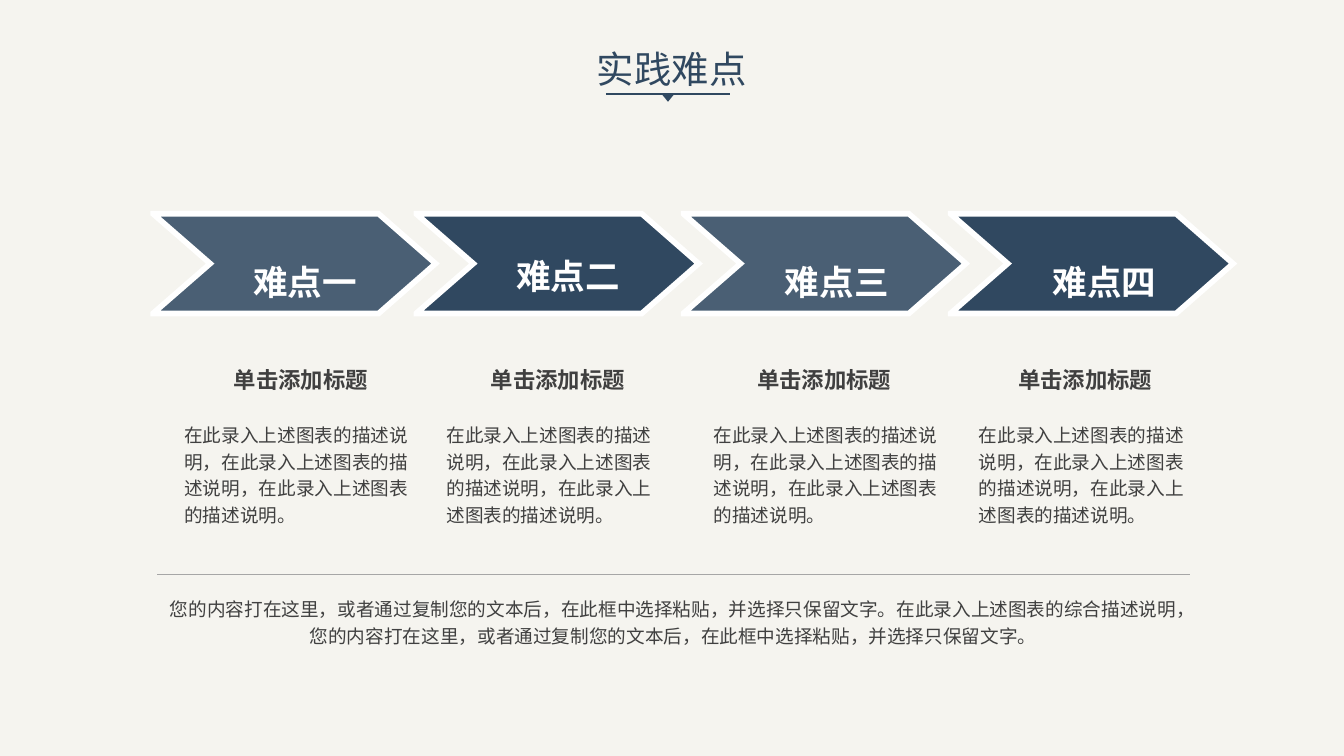
from dataclasses import dataclass

from lxml import etree
from pptx import Presentation
from pptx.dml.color import RGBColor
from pptx.enum.shapes import MSO_CONNECTOR, MSO_SHAPE
from pptx.enum.text import MSO_ANCHOR, MSO_AUTO_SIZE, PP_ALIGN
from pptx.oxml.ns import qn
from pptx.util import Inches, Pt

LINE = MSO_CONNECTOR.STRAIGHT
WEDGE = MSO_SHAPE.ISOSCELES_TRIANGLE
LEFT, MID = PP_ALIGN.LEFT, PP_ALIGN.CENTER
TOP, CORE = MSO_ANCHOR.TOP, MSO_ANCHOR.MIDDLE
GROW = MSO_AUTO_SIZE.SHAPE_TO_FIT_TEXT

WIDE, HIGH = Inches(13.33), Inches(7.5)
COLS, ROWS = 133.3, 75
NAVY, SLATE, WHITE = "304860", "4A5F74", "FFFFFF"
INK, GREY, PAPER = "404040", "A6A6A6", "F5F4EF"
SANS, LATIN = "Noto Sans CJK SC", "Arial"

HEAD = "单击添加标题"
BODY = "，".join(["在此录入上述图表的描述说明"] * 3) + "。"
PASTE = "您的内容打在这里，或者通过复制您的文本后，在此框中选择粘贴，并选择只保留文字。"
NOTE = PASTE + "在此录入上述图表的综合描述说明，" + PASTE


@dataclass
class Box:
    col: float
    row: float
    wide: float
    high: float


@dataclass
class Style:
    size: float
    hue: str = INK
    face: str = SANS
    bold: bool = False
    align: PP_ALIGN = MID
    anchor: MSO_ANCHOR = TOP
    lead: float = 1.0
    wrap: bool = True
    shift: int = 0


@dataclass
class Step:
    name: str
    hue: str
    left: float
    label: Box
    lead: float
    head: float
    body: float
    span: float


STEPS = [
    Step("难点一", SLATE, 15.2, Box(18.1, 22.8, 24.3, 6.6), 1.2, 22.2, 17.3, 24.6),
    Step("难点二", NAVY, 41.3, Box(44.5, 23.3, 23.7, 5.7), 1.0, 47.7, 43.3, 24),
    Step("难点三", SLATE, 67.8, Box(71.3, 22.8, 23.4, 6.6), 1.2, 74.1, 69.8, 24.4),
    Step("难点四", NAVY, 94.3, Box(97.7, 22.8, 23.7, 6.6), 1.2, 100, 96.1, 24),
]
ARROW = [(0, 0), (22.35, 0), (28, 4.95), (22.35, 9.9), (0, 9.9), (0, 9.87), (5.65, 4.95), (0, 0.03)]
CREST = 21.2


def tint(code: str) -> RGBColor:
    return RGBColor.from_string(code)


def across(col: float) -> int:
    return round(WIDE * col / COLS)


def down(row: float) -> int:
    return round(HIGH * row / ROWS)


def place(box: Box) -> tuple[int, int, int, int]:
    return across(box.col), down(box.row), across(box.wide), down(box.high)


def apply(item, form: dict) -> None:
    for key, value in form.items():
        setattr(item, key, value)


def write(shapes, text: str, box: Box, style: Style) -> None:
    frame = shapes.add_textbox(*place(box)).text_frame
    apply(frame, {"word_wrap": style.wrap, "auto_size": GROW, "vertical_anchor": style.anchor})
    para = frame.paragraphs[0]
    apply(para, {"alignment": style.align, "line_spacing": style.lead})
    run = para.add_run()
    run.text = text
    run.font.color.rgb = tint(style.hue)
    apply(run.font, {"size": Pt(style.size), "name": style.face, "bold": style.bold})
    props = run.font._element
    props.set("lang", "zh-CN")
    etree.SubElement(props, qn("a:ea"), typeface=SANS)
    if style.shift:
        props.set("baseline", str(style.shift))


def rule(shapes, start: float, end: float, row: float, hue: str, width: float) -> None:
    line = shapes.add_connector(LINE, across(start), down(row), across(end), down(row))
    line.line.color.rgb = tint(hue)
    line.line.width = Pt(width)
    etree.SubElement(line._element.spPr, qn("a:effectLst"))


def chevron(shapes, left: float, hue: str) -> None:
    first, *rest = [(across(left + col), down(CREST + row)) for col, row in ARROW]
    path = shapes.build_freeform(*first)
    path.add_line_segments(rest)
    shape = path.convert_to_shape()
    shape.shadow.inherit = False
    shape.fill.solid()
    shape.fill.fore_color.rgb = tint(hue)
    shape.line.color.rgb = tint(WHITE)
    shape.line.width = Pt(4)
    etree.SubElement(shape.line._get_or_add_ln(), qn("a:miter"), lim="800000")


def title(shapes) -> None:
    rule(shapes, 60.1, 72.4, 9.3, NAVY, 1.5)
    mark = shapes.add_shape(WEDGE, *place(Box(65.6, 9.3, 1.3, 0.8)))
    mark.rotation = 180
    mark.shadow.inherit = False
    mark.fill.solid()
    mark.fill.fore_color.rgb = tint(NAVY)
    mark.line.fill.background()
    write(shapes, "实践难点", Box(58.2, 4.1, 17.2, 5.4), Style(26.7, NAVY, align=LEFT, wrap=False))


def column(shapes, step: Step) -> None:
    group = shapes.add_group_shape().shapes
    chevron(group, step.left, step.hue)
    label = Style(42.7, WHITE, LATIN, True, anchor=CORE, lead=step.lead, shift=-3000)
    write(group, step.name, step.label, label)
    write(shapes, HEAD, Box(step.head, 35.8, 15.3, 3.7), Style(16, bold=True, wrap=False))
    write(shapes, BODY, Box(step.body, 41.1, step.span, 11.7), Style(13.3, align=LEFT, lead=1.2))


def main() -> None:
    deck = Presentation()
    apply(deck, {"slide_width": WIDE, "slide_height": HIGH})
    slide = deck.slides.add_slide(deck.slide_layouts[6])
    slide.background.fill.solid()
    slide.background.fill.fore_color.rgb = tint(PAPER)
    title(slide.shapes)
    for step in STEPS:
        column(slide.shapes, step)
    rule(slide.shapes, 15.6, 118, 57, GREY, 0.5)
    write(slide.shapes, NOTE, Box(15.5, 58.4, 102.6, 6.3), Style(13.3, lead=1.2))
    deck.save("out.pptx")


if __name__ == "__main__":
    main()
